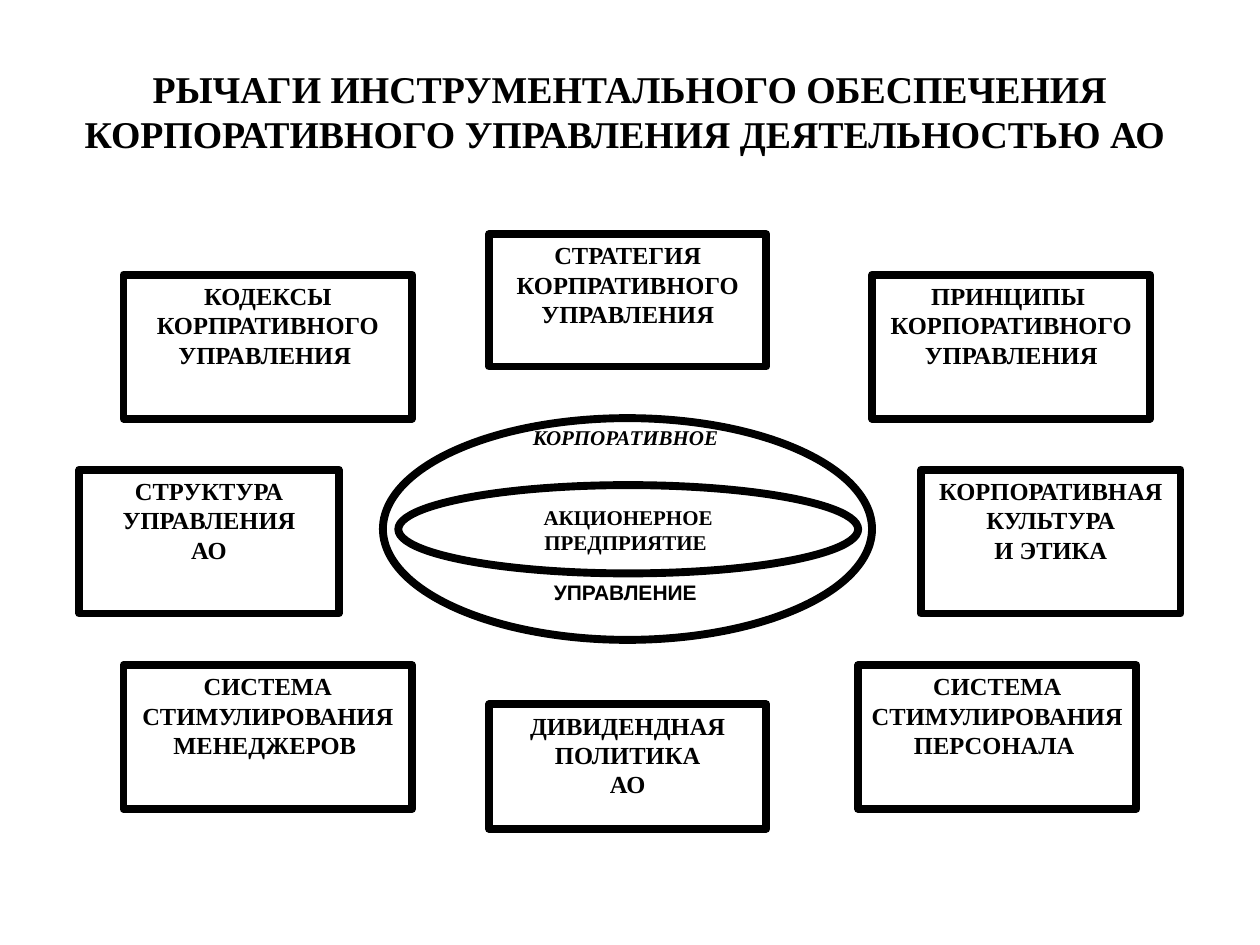
from pptx import Presentation
from pptx import util as u
from pptx.dml.color import RGBColor
from pptx.enum import shapes, text

BLACK = RGBColor(0, 0, 0)
WHITE = RGBColor(255, 255, 255)
SERIF, SANS = "Times New Roman", "Arial"
KIND = shapes.MSO_SHAPE


class Board:
    def __init__(self, slide):
        self.slide = slide
        self.edge = u.Pt(4.5)

    def letter(self, shape, lines, size, font=SERIF, italic=False,
               anchor=text.MSO_ANCHOR.TOP):
        """Fill a shape with centred bold paragraphs."""
        frame = shape.text_frame
        frame.word_wrap = True
        frame.vertical_anchor = anchor
        for i, line in enumerate(lines):
            para = frame.add_paragraph() if i else frame.paragraphs[0]
            para.alignment = text.PP_ALIGN.CENTER
            run = para.add_run()
            run.text = line
            run.font.name = font
            run.font.size = u.Pt(size)
            run.font.bold = True
            run.font.italic = italic
            run.font.color.rgb = BLACK

    def form(self, kind, area, fill=True, line=True):
        """Add a preset shape; area is left, top, width, height in cm."""
        shape = self.slide.shapes.add_shape(kind, *map(u.Cm, area))
        shape.shadow.inherit = False
        if fill:
            shape.fill.solid()
            shape.fill.fore_color.rgb = WHITE
        else:
            shape.fill.background()
        if line:
            shape.line.color.rgb = BLACK
            shape.line.width = self.edge
        else:
            shape.line.fill.background()
        return shape

    def title(self, area, line):
        box = self.slide.shapes.add_textbox(*map(u.Cm, area))
        self.letter(box, [line], 21.6, anchor=text.MSO_ANCHOR.MIDDLE)

    def lever(self, area, lines):
        self.letter(self.form(KIND.RECTANGLE, area), lines, 14)

    def label(self, area, line, font=SERIF, italic=False):
        box = self.form(KIND.RECTANGLE, area, line=False)
        self.letter(box, [line], 12, font, italic)

    def core(self, area, line):
        self.letter(self.form(KIND.OVAL, area), [line], 12)

    def ring(self, area):
        self.form(KIND.FLOWCHART_CONNECTOR, area, fill=False)


UPPER, MIDDLE, LOWER = 5.54, 9.47, 13.41
LEFT, CENTER = 2.49, 9.86
TALL = 2.9

LEVERS = [
    ((LEFT, UPPER, 5.82, TALL), ["КОДЕКСЫ КОРПРАТИВНОГО УПРАВЛЕНИЯ "]),
    ((CENTER, 4.72, 5.59, 2.67), ["СТРАТЕГИЯ КОРПРАТИВНОГО УПРАВЛЕНИЯ"]),
    ((17.58, UPPER, 5.61, TALL), ["ПРИНЦИПЫ ", "КОРПОРАТИВНОГО УПРАВЛЕНИЯ"]),
    ((LEFT, LOWER, 5.82, TALL), ["СИСТЕМА СТИМУЛИРОВАНИЯ МЕНЕДЖЕРОВ "]),
    ((CENTER, 14.2, 5.59, 2.51), ["ДИВИДЕНДНАЯ ПОЛИТИКА", "АО"]),
    ((17.3, LOWER, 5.61, TALL), ["СИСТЕМА СТИМУЛИРОВАНИЯ ПЕРСОНАЛА "]),
    ((1.6, MIDDLE, 5.23, TALL), ["СТРУКТУРА УПРАВЛЕНИЯ", "АО"]),
    ((18.57, MIDDLE, 5.23, TALL), ["КОРПОРАТИВНАЯ", "КУЛЬТУРА", "И ЭТИКА"]),
]


def main():
    deck = Presentation()
    deck.slide_width, deck.slide_height = u.Cm(25.4), u.Cm(19.05)
    board = Board(deck.slides.add_slide(deck.slide_layouts[6]))
    board.title((1.27, 0.64, 22.86, 3.18),
                "РЫЧАГИ ИНСТРУМЕНТАЛЬНОГО ОБЕСПЕЧЕНИЯ "
                "КОРПОРАТИВНОГО УПРАВЛЕНИЯ ДЕЯТЕЛЬНОСТЬЮ АО ")
    for area, lines in LEVERS:
        board.lever(area, lines)
    board.label((10.34, 8.43, 4.65, 1.35), "КОРПОРАТИВНОЕ ", italic=True)
    board.label((10.06, 11.56, 5.21, 1.35), "УПРАВЛЕНИЕ ", SANS)
    board.core((8.03, 9.78, 9.27, 1.78), "АКЦИОНЕРНОЕ ПРЕДПРИЯТИЕ ")
    board.ring((7.72, 8.43, 9.86, 4.47))
    deck.save("out.pptx")


if __name__ == "__main__":
    main()
